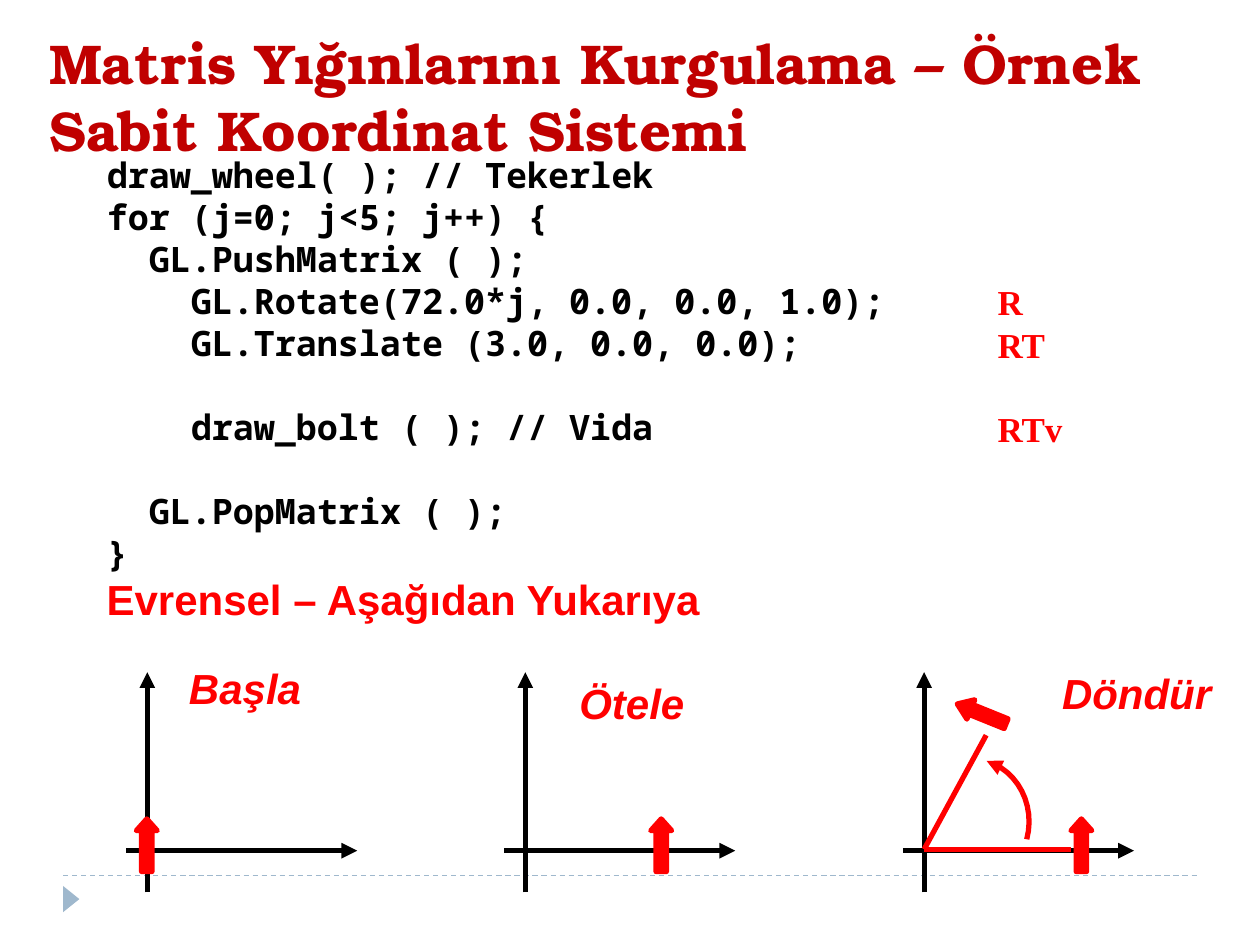
"""Build the slide on matrix stacks in a fixed coordinate system."""
from lxml import etree
from pptx import Presentation
from pptx.dml.color import RGBColor
from pptx.enum.dml import MSO_LINE
from pptx.enum.shapes import MSO_CONNECTOR, MSO_SHAPE
from pptx.enum.text import MSO_ANCHOR, MSO_AUTO_SIZE, PP_ALIGN
from pptx.oxml.ns import qn
from pptx.util import Cm, Pt

STRAIGHT = MSO_CONNECTOR.STRAIGHT
UP_ARROW = MSO_SHAPE.UP_ARROW
TRIANGLE = MSO_SHAPE.ISOSCELES_TRIANGLE
DASH = MSO_LINE.DASH
LEFT = PP_ALIGN.LEFT
MIDDLE = MSO_ANCHOR.MIDDLE
TOP = MSO_ANCHOR.TOP
NO_FIT = MSO_AUTO_SIZE.NONE

RED = RGBColor(0xFF, 0x00, 0x00)
DARK_RED = RGBColor(0xC0, 0x00, 0x00)
BLACK = RGBColor(0x00, 0x00, 0x00)
PALE_BLUE = RGBColor(0x9F, 0xB8, 0xCD)

TITLE_FONT = {"name": "TeX Gyre Bonum", "size": Pt(32), "bold": True, "italic": False}
CODE_FONT = {"name": "Noto Sans Mono", "size": Pt(20), "bold": True, "italic": False}
MATRIX_FONT = {"name": "Times New Roman", "size": Pt(20), "bold": True, "italic": False}
HEADING_FONT = {"name": "Arial", "size": Pt(24), "bold": True, "italic": False}
STEP_FONT = {**HEADING_FONT, "italic": True}
LINE_PITCH = Pt(24)


def fill_text(shape, box, lines, font_format, color, anchor=TOP, pitch=None):
    """Place a shape and write (text, indent level, blank lines before) rows in it."""
    shape.left, shape.top, shape.width, shape.height = [Cm(value) for value in box]
    frame = shape.text_frame
    frame.auto_size, frame.word_wrap, frame.vertical_anchor = NO_FIT, True, anchor
    for index, (text, level, gap) in enumerate(lines):
        paragraph = frame.paragraphs[0] if index == 0 else frame.add_paragraph()
        paragraph.text = text
        paragraph.alignment = LEFT
        paragraph.space_before = gap * LINE_PITCH
        paragraph.line_spacing = pitch
        properties = paragraph._p.get_or_add_pPr()
        properties.set("marL", str(level * LINE_PITCH))
        properties.set("indent", "0")
        etree.SubElement(properties, qn("a:buNone"))
        for run in paragraph.runs:
            for attribute, value in font_format.items():
                setattr(run.font, attribute, value)
            run.font.color.rgb = color


def draw_line(shapes, points, color, width=3, arrow=False):
    """Draw a straight connector, with an arrowhead at its end if asked for."""
    connector = shapes.add_connector(STRAIGHT, *[Cm(value) for value in points])
    connector.line.color.rgb = color
    connector.line.width = Pt(width)
    etree.SubElement(connector._element.spPr, qn("a:effectLst"))
    if arrow:
        etree.SubElement(connector.line._get_or_add_ln(), qn("a:tailEnd"), type="triangle")
    return connector


presentation = Presentation()
presentation.slide_width, presentation.slide_height = Cm(25.4), Cm(19.05)
slide = presentation.slides.add_slide(presentation.slide_layouts[1])
shapes = slide.shapes

footer_line = draw_line(shapes, (1.27, 17.65, 24.13, 17.65), PALE_BLUE, 0.75)
footer_line.line.dash_style = DASH
footer_mark = shapes.add_shape(TRIANGLE, Cm(1.17), Cm(17.96), Cm(0.53), Cm(0.33))
footer_mark.rotation = 90
footer_mark.shadow.inherit = False
footer_mark.fill.solid()
footer_mark.fill.fore_color.rgb = PALE_BLUE
footer_mark.line.fill.background()

title_lines = [("Matris Yığınlarını Kurgulama – Örnek\vSabit Koordinat Sistemi", 0, 0)]
fill_text(shapes.title, (0.74, 0.33, 23.83, 3.18), title_lines, TITLE_FONT, DARK_RED, MIDDLE)

code_lines = [
    ("draw_wheel( ); // Tekerlek", 0, 0),
    ("for (j=0; j<5; j++) {", 0, 0),
    ("GL.PushMatrix ( );", 1, 0),
    ("GL.Rotate(72.0*j, 0.0, 0.0, 1.0);", 2, 0),
    ("GL.Translate (3.0, 0.0, 0.0);", 2, 0),
    ("draw_bolt ( ); // Vida", 2, 1),
    ("GL.PopMatrix ( );", 1, 1),
    ("}", 0, 0),
]
fill_text(slide.placeholders[1], (1.9, 2.92, 16.76, 8.81), code_lines,
          CODE_FONT, BLACK, MIDDLE, LINE_PITCH)

matrix_lines = [("R", 0, 0), ("RT", 0, 0), ("RTv", 0, 1)]
fill_text(shapes.add_textbox(0, 0, 0, 0), (19.86, 5.54, 2.2, 3.68), matrix_lines,
          MATRIX_FONT, RED, pitch=LINE_PITCH)

for text, box, font_format in [
    ("Evrensel – Aşağıdan Yukarıya", (1.9, 11.43, 13.2, 1.27), HEADING_FONT),
    ("Başla", (3.56, 13.23, 3.2, 1.27), STEP_FONT),
    ("Ötele", (11.43, 13.54, 3.2, 1.27), STEP_FONT),
    ("Döndür", (21.16, 13.34, 4.2, 1.27), STEP_FONT),
]:
    fill_text(shapes.add_textbox(0, 0, 0, 0), box, [(text, 0, 0)], font_format, RED)

for left in (2.54, 10.16, 18.2):
    axes = shapes.add_group_shape()
    draw_line(axes.shapes, (left, 17.15, left + 4.66, 17.15), BLACK, arrow=True)
    draw_line(axes.shapes, (left + 0.43, 17.99, left + 0.43, 13.55), BLACK, arrow=True)

for left, top, rotation, head in [
    (2.75, 16.51, 0, 0.56),
    (13.12, 16.51, 0, 0.56),
    (19.58, 13.86, 292, 0.7),
    (21.59, 16.51, 0, 0.56),
]:
    bolt = shapes.add_shape(UP_ARROW, Cm(left), Cm(top), Cm(0.42), Cm(1.06))
    bolt.adjustments[0], bolt.adjustments[1] = 0.5, head
    bolt.rotation = rotation
    bolt.shadow.inherit = False
    bolt.fill.solid()
    bolt.fill.fore_color.rgb = RED
    bolt.line.color.rgb = RED
    bolt.line.width = Pt(3)

for end_x, end_y in [(21.59, 17.12), (19.88, 14.82)]:
    draw_line(shapes, (18.63, 17.12, end_x, end_y), RED)

curve_controls = [(20.7, 16.92), (20.88, 16.23), (20.52, 15.54), (19.89, 15.34)]
curve_points = []
for step in range(13):
    t = step / 12
    weights = ((1 - t) ** 3, 3 * t * (1 - t) ** 2, 3 * t ** 2 * (1 - t), t ** 3)
    curve_points.append(tuple(
        Cm(sum(weight * value for weight, value in zip(weights, values)))
        for values in zip(*curve_controls)))
builder = shapes.build_freeform(*curve_points[0])
builder.add_line_segments(curve_points[1:], close=False)
rotation_curve = builder.convert_to_shape()
rotation_curve.shadow.inherit = False
rotation_curve.fill.background()
rotation_curve.line.color.rgb = RED
rotation_curve.line.width = Pt(3)
etree.SubElement(rotation_curve.line._get_or_add_ln(), qn("a:tailEnd"), type="triangle")

presentation.save("out.pptx")
